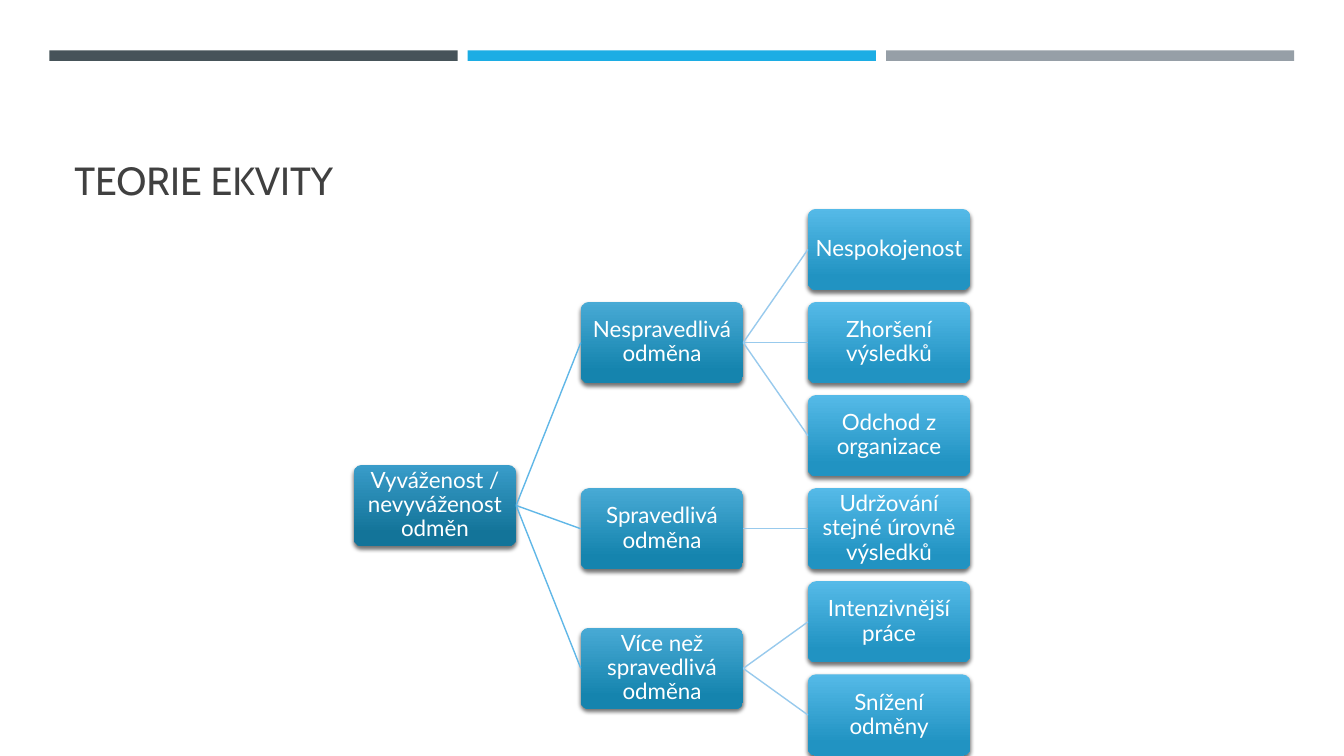
import dataclasses

import lxml.etree
import pptx
import pptx.dml.color
import pptx.enum.shapes
import pptx.enum.text
import pptx.oxml
import pptx.oxml.ns
import pptx.util

Pt = pptx.util.Pt
RGBColor = pptx.dml.color.RGBColor
MSO_SHAPE = pptx.enum.shapes.MSO_SHAPE
MSO_ANCHOR = pptx.enum.text.MSO_ANCHOR

SLIDE_WIDTH, SLIDE_HEIGHT = 960, 540
BOX_WIDTH, BOX_HEIGHT = 116, 58
TREE_LEFT, COLUMN_STEP = 252.7, 162.2
FIRST_LEAF_CENTER, LEAF_STEP = 178.2, 66.5
BAR_LEFT, BAR_TOP, BAR_WIDTH, BAR_HEIGHT, BAR_STEP = 35.3, 36, 291.6, 7.5, 298.8

REWARD_TREE = ("Vyváženost / nevyváženost odměn", [
    ("Nespravedlivá odměna", [
        ("Nespokojenost", []),
        ("Zhoršení výsledků", []),
        ("Odchod z organizace", []),
    ]),
    ("Spravedlivá odměna", [
        ("Udržování stejné úrovně výsledků", []),
    ]),
    ("Více než spravedlivá odměna", [
        ("Intenzivnější práce", []),
        ("Snížení odměny", []),
    ]),
])

SHADOW_XML = (
    f'<a:outerShdw {pptx.oxml.ns.nsdecls("a")} blurRad="{Pt(3)}" dist="{Pt(2)}" '
    'dir="5400000" algn="ctr" rotWithShape="0">'
    '<a:srgbClr val="000000"><a:alpha val="55000"/></a:srgbClr></a:outerShdw>'
)


@dataclasses.dataclass(frozen=True)
class Theme:
    title_font: str = "Cabin"
    title_size: int = 28
    title_color: str = "404040"
    box_font: str = "Lato"
    box_size: int = 16
    box_color: str = "FFFFFF"
    bars: tuple = ("465359", "1CADE4", "969FA7")
    box_gradients: tuple = (("399CC9", "137499"), ("48AAD5", "1584AE"), ("55BAE8", "2193C2"))
    branch_lines: tuple = ("60B7E7", "98CAED")
    line_width: int = 1


class SlideBuilder:
    def __init__(self, slide, theme):
        self.slide = slide
        self.theme = theme
        self.leaf_count = 0

    def style_font(self, paragraph, name, size, color):
        paragraph.font.name = name
        paragraph.font.size = Pt(size)
        paragraph.font.color.rgb = RGBColor.from_string(color)

    def add_header_bars(self):
        for index, color in enumerate(self.theme.bars):
            bar = self.slide.shapes.add_shape(
                MSO_SHAPE.RECTANGLE, Pt(BAR_LEFT + index * BAR_STEP), Pt(BAR_TOP),
                Pt(BAR_WIDTH), Pt(BAR_HEIGHT))
            bar.shadow.inherit = False
            bar.fill.solid()
            bar.fill.fore_color.rgb = RGBColor.from_string(color)
            bar.line.fill.background()

    def add_title(self, text):
        title = self.slide.shapes.add_textbox(Pt(46), Pt(55.4), Pt(868), Pt(93.6))
        frame = title.text_frame
        frame.word_wrap = True
        frame.vertical_anchor = MSO_ANCHOR.BOTTOM
        paragraph = frame.paragraphs[0]
        paragraph.text = text
        self.style_font(paragraph, self.theme.title_font, self.theme.title_size,
                        self.theme.title_color)

    def add_box(self, text, level, center):
        box = self.slide.shapes.add_shape(
            MSO_SHAPE.ROUNDED_RECTANGLE, Pt(TREE_LEFT + level * COLUMN_STEP),
            Pt(center - BOX_HEIGHT / 2), Pt(BOX_WIDTH), Pt(BOX_HEIGHT))
        box.adjustments[0] = 0.1
        box.line.fill.background()
        box.fill.gradient()
        box.fill.gradient_angle = 270
        stops = zip(box.fill.gradient_stops, self.theme.box_gradients[level], (0, 0.84))
        for stop, color, position in stops:
            stop.color.rgb = RGBColor.from_string(color)
            stop.position = position
        box.shadow.inherit = False
        effects = box._element.spPr.find(pptx.oxml.ns.qn("a:effectLst"))
        effects.append(pptx.oxml.parse_xml(SHADOW_XML))

        frame = box.text_frame
        frame.word_wrap = True
        frame.vertical_anchor = MSO_ANCHOR.MIDDLE
        frame.margin_left = frame.margin_right = Pt(1.8)
        frame.margin_top = frame.margin_bottom = Pt(1.8)
        paragraph = frame.paragraphs[0]
        paragraph.text = text
        paragraph.alignment = pptx.enum.text.PP_ALIGN.CENTER
        paragraph.line_spacing = 0.9
        self.style_font(paragraph, self.theme.box_font, self.theme.box_size,
                        self.theme.box_color)
        return box

    def add_branch(self, parent, child, level):
        branch = self.slide.shapes.add_connector(
            pptx.enum.shapes.MSO_CONNECTOR.STRAIGHT, 0, 0, 0, 0)
        branch.begin_connect(parent, 3)
        branch.end_connect(child, 1)
        branch.line.color.rgb = RGBColor.from_string(self.theme.branch_lines[level])
        branch.line.width = Pt(self.theme.line_width)
        lxml.etree.SubElement(branch._element.spPr, pptx.oxml.ns.qn("a:effectLst"))

    def add_tree(self, node, level=0):
        """Draw a node midway between its outer children; return its box and center."""
        text, children = node
        placed = [self.add_tree(child, level + 1) for child in children]
        if placed:
            center = (placed[0][1] + placed[-1][1]) / 2
        else:
            center = FIRST_LEAF_CENTER + self.leaf_count * LEAF_STEP
            self.leaf_count += 1
        box = self.add_box(text, level, center)
        for child_box, _ in placed:
            self.add_branch(box, child_box, level)
        return box, center


def main():
    presentation = pptx.Presentation()
    presentation.slide_width = Pt(SLIDE_WIDTH)
    presentation.slide_height = Pt(SLIDE_HEIGHT)
    slide = presentation.slides.add_slide(presentation.slide_layouts[6])
    builder = SlideBuilder(slide, Theme())
    builder.add_header_bars()
    builder.add_title("TEORIE EKVITY")
    builder.add_tree(REWARD_TREE)
    presentation.save("out.pptx")


if __name__ == "__main__":
    main()
